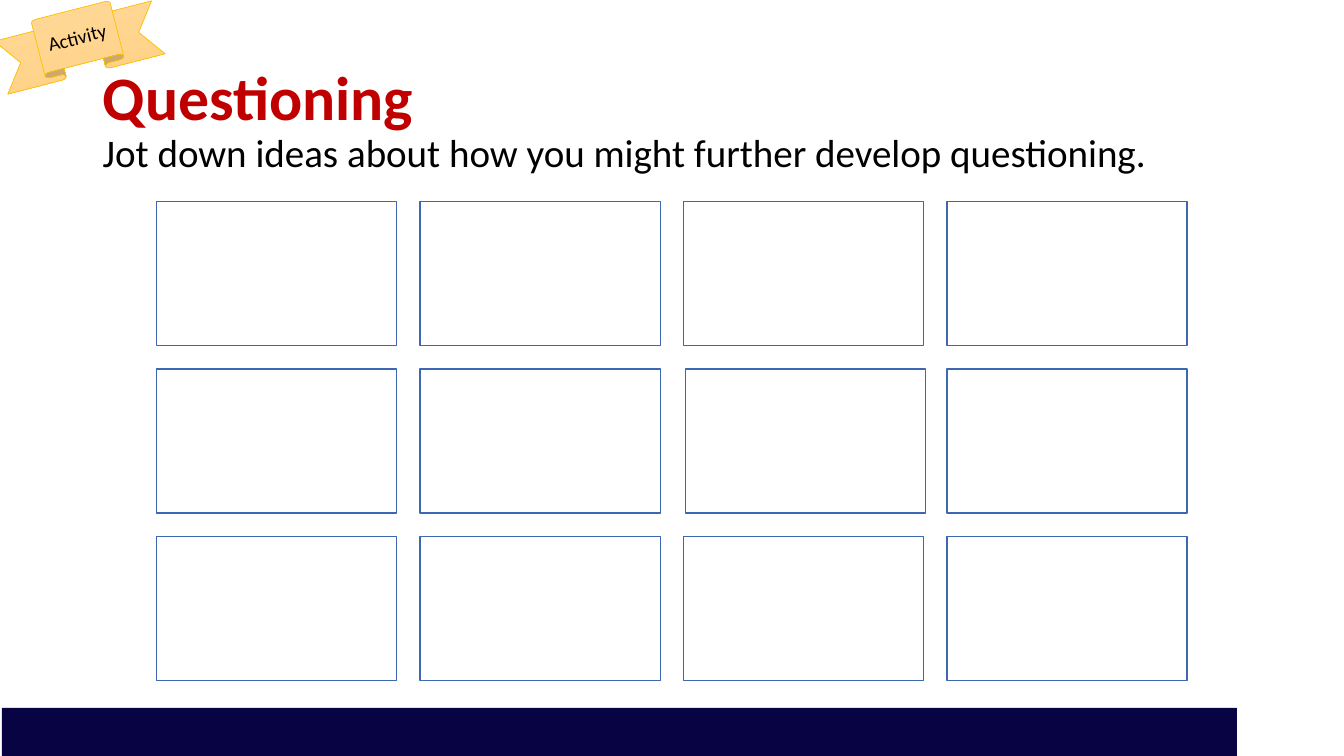
from copy import deepcopy

from pptx import Presentation
from pptx.dml.color import RGBColor
from pptx.enum.shapes import MSO_SHAPE as SHAPE
from pptx.enum.text import MSO_ANCHOR as ANCHOR, PP_ALIGN as ALIGN
from pptx.oxml.ns import qn
from pptx.util import Cm, Pt


def rgb(value):
    return RGBColor.from_string(value)


def add_run(p, text, size, color, bold=False):
    r = p.add_run()
    r.text = text
    r.font.name = "Calibri"
    r.font.size = Pt(size)
    r.font.bold = bold
    r.font.color.rgb = rgb(color)


prs = Presentation()
prs.slide_width = Cm(33.87)
prs.slide_height = Cm(19.05)
s = prs.slides.add_slide(prs.slide_layouts[6])

# Footer bar
bar = s.shapes.add_shape(SHAPE.RECTANGLE, Cm(0.05), Cm(17.84), Cm(31.12), Cm(1.22))
bar.shadow.inherit = False
bar.fill.solid()
bar.fill.fore_color.rgb = rgb("080343")
bar.line.fill.background()

# Activity ribbon
ribbon = s.shapes.add_shape(SHAPE.UP_RIBBON, Cm(-0.07), Cm(0.24), Cm(4.09), Cm(1.65))
ribbon.rotation = 345.6
ribbon.shadow.inherit = False
ribbon.fill.gradient()
ribbon.fill.gradient_angle = 270
stop_list = ribbon.element.spPr.find(qn("a:gradFill")).find(qn("a:gsLst"))
stop_list.insert(1, deepcopy(stop_list[0]))
stops = ((0, "FFDB9E"), (0.5, "FFD590"), (1, "FFD07C"))
for stop, (position, color) in zip(ribbon.fill.gradient_stops, stops):
    stop.position = position
    stop.color.rgb = rgb(color)
ribbon.line.color.rgb = rgb("FFC000")
ribbon.line.width = Pt(0.5)
tf = ribbon.text_frame
tf.vertical_anchor = ANCHOR.MIDDLE
p = tf.paragraphs[0]
p.alignment = ALIGN.CENTER
add_run(p, "Activity", 14, "000000")

# Title and instruction
title = s.shapes.add_textbox(Cm(2.34), Cm(1.22), Cm(29.21), Cm(3.68))
tf = title.text_frame
tf.word_wrap = True
tf.vertical_anchor = ANCHOR.MIDDLE
p = tf.paragraphs[0]
p.line_spacing = 0.9
add_run(p, "Questioning", 44.1, "C00000", bold=True)
p.add_line_break()
add_run(p, "Jot down ideas about how you might further develop questioning.", 27.9, "000000")

# Grid of empty idea boxes; one box sits slightly to the right
for row in range(3):
    for col in range(4):
        nudge = 0.05 if (row, col) == (1, 2) else 0
        box = s.shapes.add_shape(
            SHAPE.RECTANGLE,
            Cm(3.95 + 6.64 * col + nudge), Cm(5.08 + 4.22 * row),
            Cm(6.05), Cm(3.63),
        )
        box.shadow.inherit = False
        box.fill.solid()
        box.fill.fore_color.rgb = rgb("FFFFFF")
        box.line.color.rgb = rgb("3E67B2")
        box.line.width = Pt(1)

prs.save("out.pptx")
